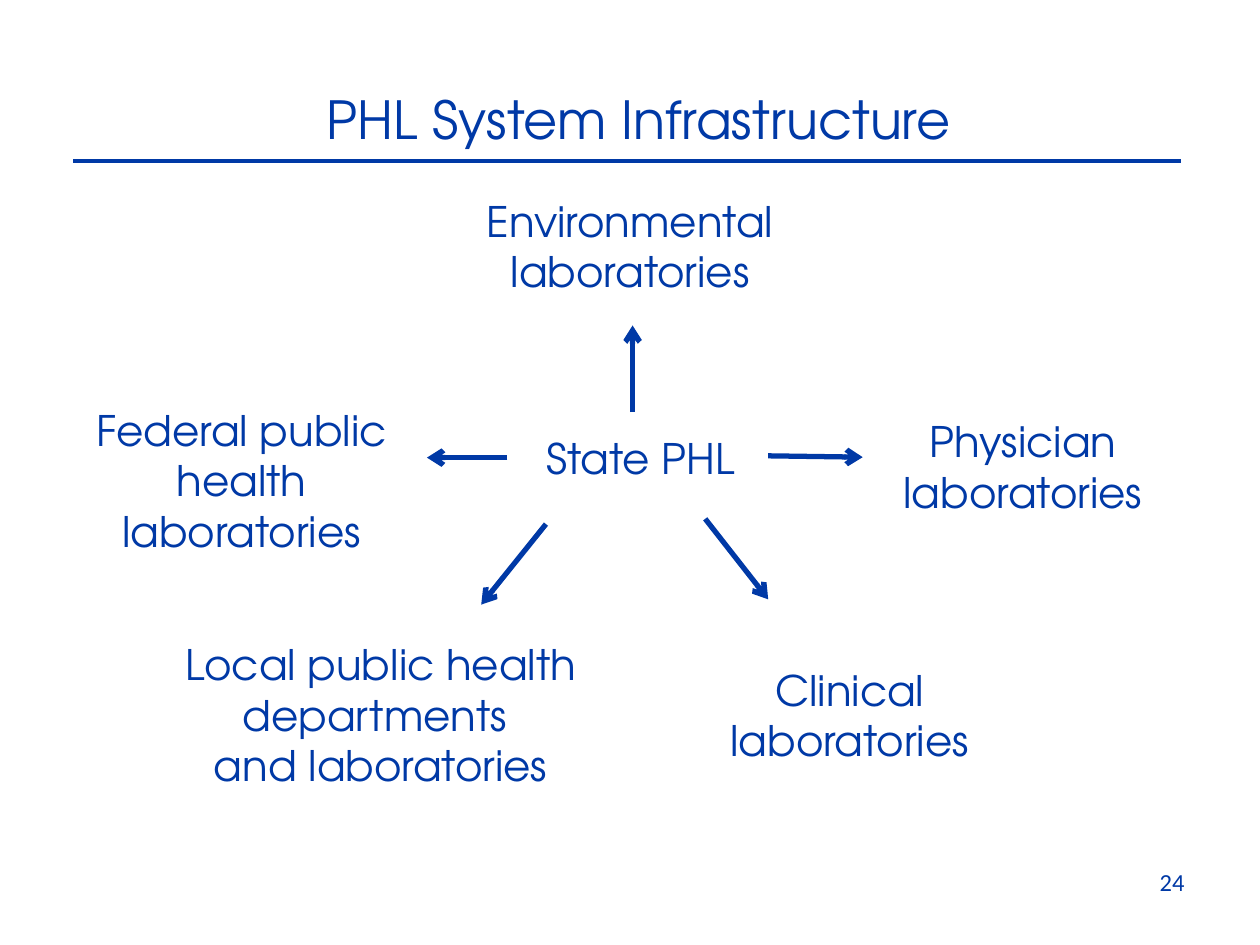
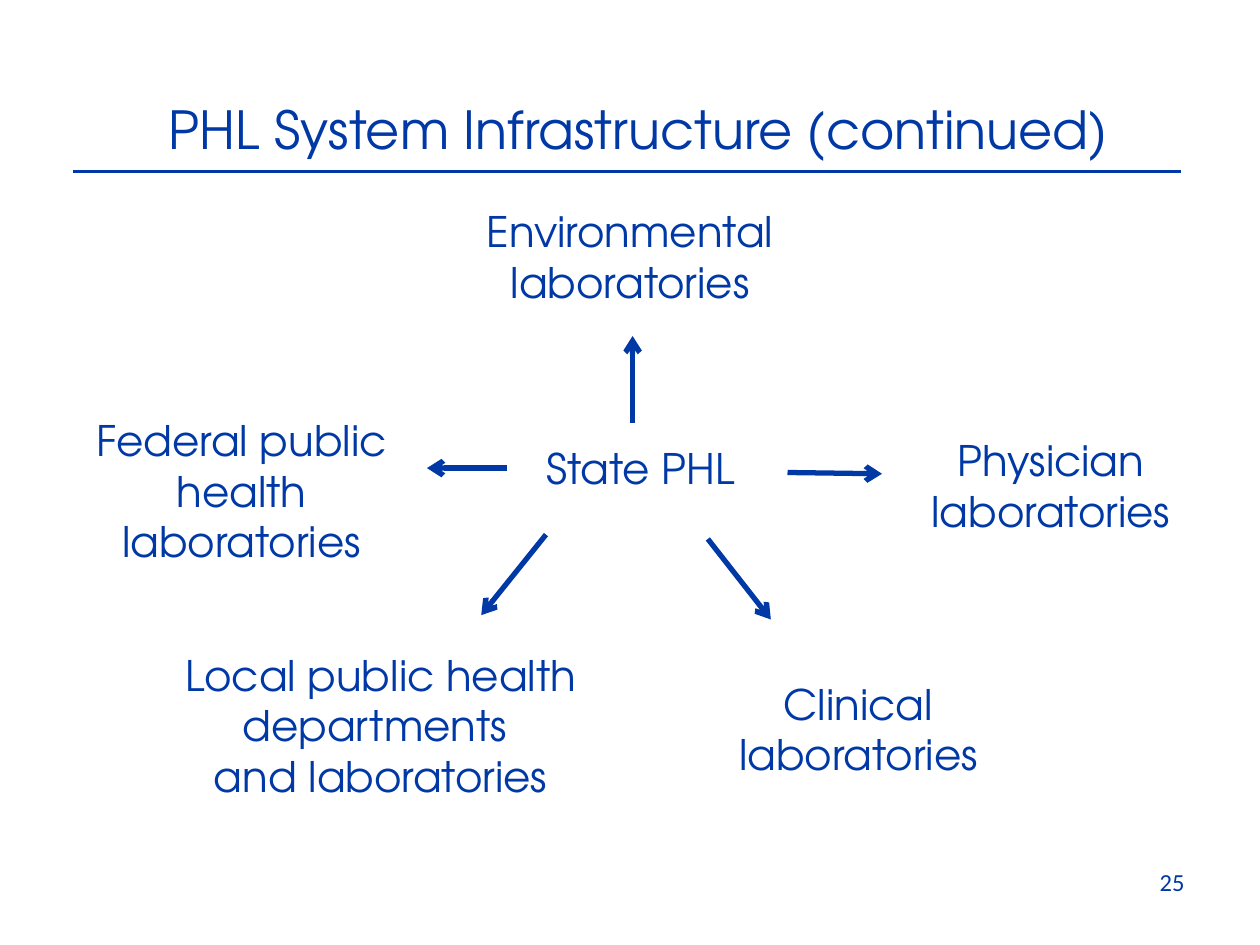
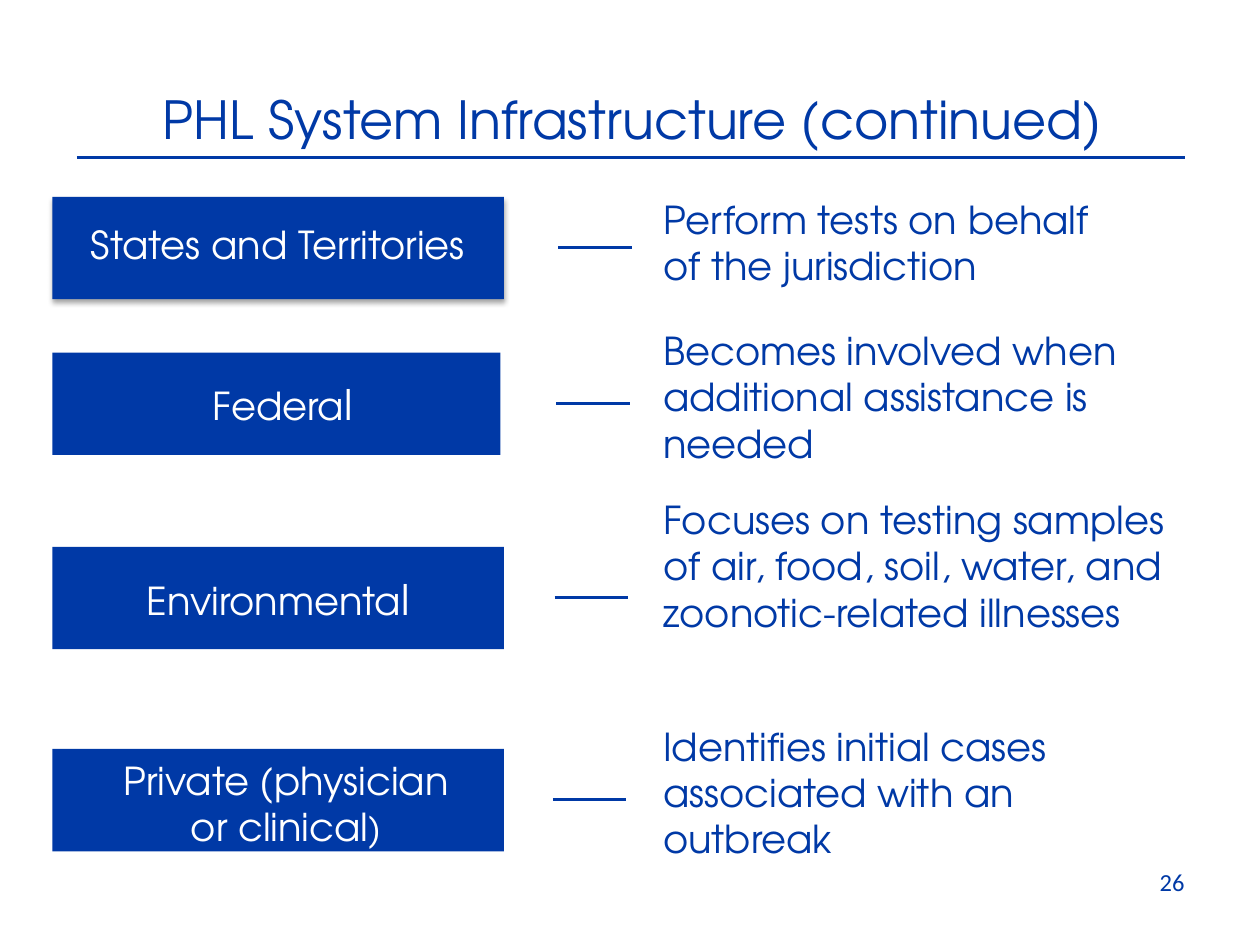
from pptx import Presentation
from pptx.dml.color import RGBColor
from pptx.enum.shapes import MSO_CONNECTOR, MSO_SHAPE
from pptx.enum.text import MSO_AUTO_SIZE, PP_ALIGN
from pptx.oxml import parse_xml
from pptx.oxml.ns import nsdecls, qn
from pptx.util import Pt

BLUE = "0039A6"
WHITE = "FFFFFF"
HEAD_FONT = "TeX Gyre Adventor"
PAGE_FONT = "Calibri"


def rgb(value):
    return RGBColor.from_string(value)


def write(tf, text, size=24, color=BLUE, font=HEAD_FONT, align=PP_ALIGN.CENTER, last_size=None):
    for i, line in enumerate(text.split("\n")):
        p = tf.add_paragraph() if i else tf.paragraphs[0]
        p.alignment = align
        p.text = line[:-1] if last_size else line
        if last_size:
            p.add_run().text = line[-1]
        for r in p.runs:
            r.font.size = Pt(size)
            r.font.name = font
            r.font.color.rgb = rgb(color)
        if last_size:
            p.runs[-1].font.size = Pt(last_size)


class Deck:
    def __init__(self):
        self.prs = Presentation()
        self.prs.slide_width, self.prs.slide_height = Pt(720), Pt(540)
        self.s = None

    def slide(self, title, page, title_at, rule_at):
        self.s = self.prs.slides.add_slide(self.prs.slide_layouts[6])
        self.text((*title_at, 579, 44), title, size=30)
        x, y = rule_at
        self.line((x, y), (x + 633, y))
        self.text((516, 492, 168, 37.5), str(page), grow=False,
                  size=14, font=PAGE_FONT, align=PP_ALIGN.RIGHT)

    def text(self, box, text, grow=True, **style):
        tf = self.s.shapes.add_textbox(*map(Pt, box)).text_frame
        tf.word_wrap = True
        tf.auto_size = MSO_AUTO_SIZE.SHAPE_TO_FIT_TEXT if grow else MSO_AUTO_SIZE.NONE
        write(tf, text, **style)

    def line(self, start, end, width=2, arrow=False):
        c = self.s.shapes.add_connector(MSO_CONNECTOR.STRAIGHT, *map(Pt, (*start, *end)))
        c.line.color.rgb = rgb(BLUE)
        c.line.width = Pt(width)
        spPr = c.element.spPr
        if arrow:
            spPr.find(qn("a:ln")).append(parse_xml(f'<a:tailEnd {nsdecls("a")} type="arrow"/>'))
        spPr.append(parse_xml(f'<a:effectLst {nsdecls("a")}/>'))

    def arrow(self, start, dx, dy):
        x, y = start
        self.line(start, (x + dx, y + dy), width=3, arrow=True)

    def bar(self, box, shadow=False):
        sp = self.s.shapes.add_shape(MSO_SHAPE.RECTANGLE, *map(Pt, box))
        sp.shadow.inherit = False
        sp.fill.solid()
        sp.fill.fore_color.rgb = rgb(BLUE)
        sp.line.fill.background()
        if shadow:
            sp.element.spPr.find(qn("a:effectLst")).append(parse_xml(
                f'<a:outerShdw {nsdecls("a")} blurRad="{Pt(3.1)}" dist="{Pt(1.8)}" dir="5400000"'
                ' rotWithShape="0"><a:srgbClr val="000000"><a:alpha val="35000"/>'
                '</a:srgbClr></a:outerShdw>'))


def hub_slide(d, title, page, dy, physician, clinical, right_start, lower_right_start):
    d.slide(title, page, (75.5, 46 + dy), (42, 92 + dy))
    d.text((258, 243.5 + dy, 216, 36), "State PHL")
    d.text((252, 108 + dy, 216, 65.5), "Environmental\nlaboratories")
    d.text((*physician, 216, 65.5), "Physician\nlaboratories")
    d.text((90, 361.5 + dy, 255, 94.5), "Local public health departments \nand laboratories")
    d.text((30, 227.5 + dy, 216, 94.5), "Federal public health\nlaboratories")
    d.text((*clinical, 165, 65.5), "Clinical\nlaboratories")
    d.arrow((361.5, 235.5 + dy), 0, -49.5)
    d.arrow((290, 261.5 + dy), -46, 0)
    d.arrow((312, 299.5 + dy), -37, 46)
    d.arrow(right_start, 54, 0.75)
    d.arrow(lower_right_start, 36, 46)


def role_slide(d, title, page):
    d.slide(title, page, (72, 46), (44, 90))
    rows = [
        (112.5, 258, "States and Territories", (32.5, 123, 252.5, 34), None,
         "Perform tests on behalf\vof the jurisdiction", (108.5, 342, 60.5)),
        (201.5, 256, "Federal", (32.5, 212.5, 258, 36), 24,
         "Becomes involved when additional assistance is needed", (183.5, 291, 87)),
        (312.5, 258, "Environmental", (36, 324, 246, 36), 24,
         "Focuses on testing samples of air, food, soil, water, and zoonotic-related illnesses",
         (280, 304, 114)),
        (428, 258, "Private (physician\vor clinical)", (30, 429, 267, 60.5), 20,
         "Identifies initial cases associated with an outbreak", (409.5, 285, 87)),
    ]
    for i, (top, width, label, label_box, last_size, role, (y, w, h)) in enumerate(rows):
        d.bar((30, top, width, 58.5), shadow=i == 0)
        d.text(label_box, label, size=22, color=WHITE, last_size=last_size)
        d.line((319 - i, top + 29), (361 - i, top + 29))
        d.text((372, y, w, h), role, size=22, align=PP_ALIGN.LEFT)


def main():
    d = Deck()
    title = "PHL System Infrastructure"
    more = f"{title} (continued)"
    hub_slide(d, title, 24, 0, (476.5, 234), (403, 376), (439, 260.5), (403, 296.5))
    hub_slide(d, more, 25, 6, (492.5, 245), (408, 384), (450, 270), (404.5, 308))
    role_slide(d, more, 26)
    d.prs.save("out.pptx")


if __name__ == "__main__":
    main()
